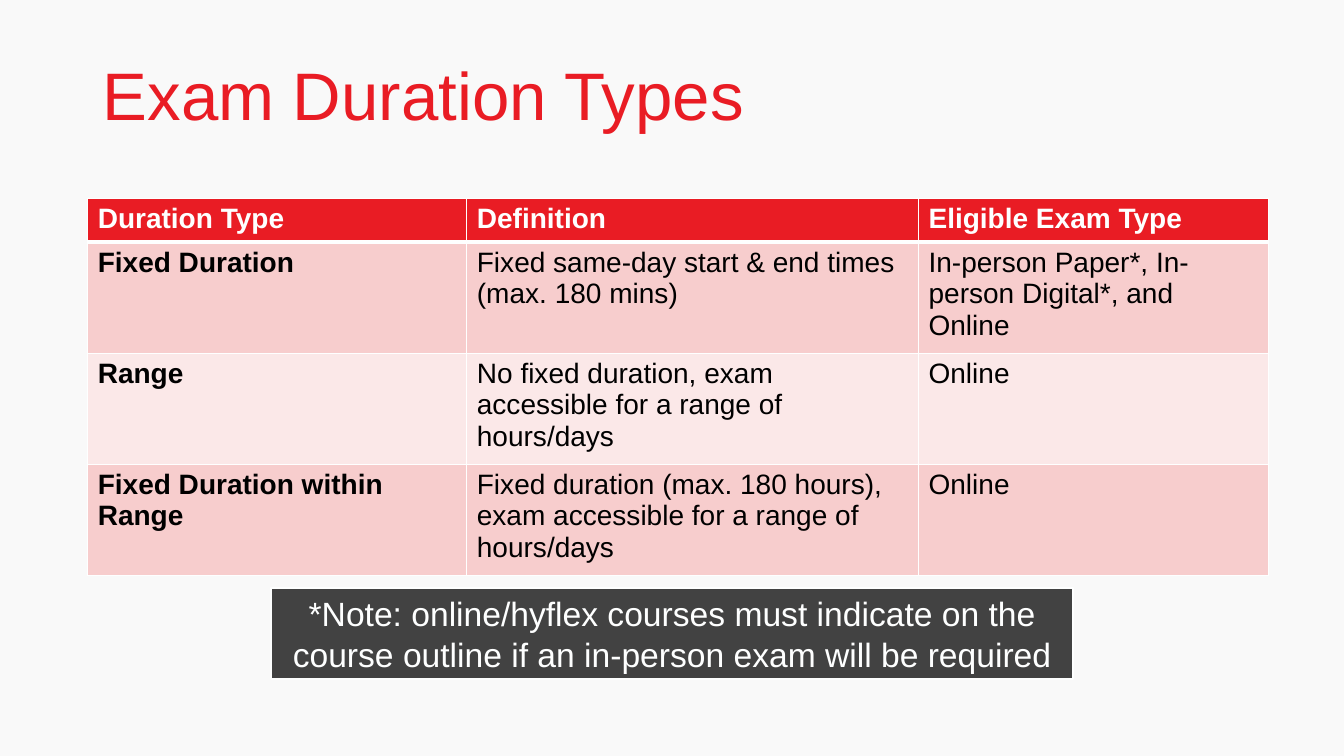
from dataclasses import dataclass

from lxml import etree
from pptx import Presentation
from pptx.dml.color import RGBColor
from pptx.enum.shapes import MSO_SHAPE
from pptx.enum.text import MSO_ANCHOR, PP_ALIGN
from pptx.oxml.ns import qn
from pptx.util import Inches, Pt

RECTANGLE = MSO_SHAPE.RECTANGLE
MIDDLE, BOTTOM = MSO_ANCHOR.MIDDLE, MSO_ANCHOR.BOTTOM
LEFT, CENTER = PP_ALIGN.LEFT, PP_ALIGN.CENTER

TITLE = "Exam Duration Types"
DURATION_ROWS = [
    ("Duration Type", "Definition", "Eligible Exam Type"),
    ("Fixed Duration", "Fixed same-day start & end times (max. 180 mins)",
     "In-person Paper*, In-person Digital*, and Online"),
    ("Range", "No fixed duration, exam accessible for a range of hours/days", "Online"),
    ("Fixed Duration within Range",
     "Fixed duration (max. 180 hours), exam accessible for a range of hours/days", "Online"),
]
NOTE = ("*Note: online/hyflex courses must indicate on the course outline "
        "if an in-person exam will be required")

TITLE_BOX = (0.92, 0.24, 11.5, 1.15)
TABLE_ORIGIN = (0.87, 1.97)
COLUMN_WIDTHS = (3.76, 4.48, 3.47)
HEADER_HEIGHT, BODY_HEIGHT = 0.41, 1.03
NOTE_BOX = (2.69, 5.83, 7.95, 0.91)


@dataclass(frozen=True)
class Theme:
    font: str = "Arial"
    background: str = "F9F9F9"
    red: str = "E91C24"
    white: str = "FEFFFF"
    black: str = "000000"
    gray: str = "424242"
    bands: tuple = ("F7CDCD", "FBE8E8")
    title_size: int = 48
    table_size: int = 20
    note_size: int = 24
    thin_line: float = 1
    header_line: float = 3
    note_line: float = 1.5


THEME = Theme()


def paint(fill, color):
    fill.solid()
    fill.fore_color.rgb = RGBColor.from_string(color)


def write_text(frame, text, *, size, color, bold=False, align=LEFT, spacing=None):
    frame.word_wrap = True
    paragraph = frame.paragraphs[0]
    paragraph.alignment = align
    if spacing:
        paragraph.line_spacing = spacing
    run = paragraph.add_run()
    run.text = text
    run.font.name = THEME.font
    run.font.size = Pt(size)
    run.font.bold = bold
    run.font.color.rgb = RGBColor.from_string(color)


def set_borders(cell, widths):
    properties = cell._tc.get_or_add_tcPr()
    for index, (side, width) in enumerate(widths.items()):
        line = etree.Element(qn(f"a:{side}"), w=str(Pt(width)))
        fill = etree.SubElement(line, qn("a:solidFill"))
        etree.SubElement(fill, qn("a:srgbClr"), val=THEME.white)
        properties.insert(index, line)


def add_title(slide):
    box = slide.shapes.add_textbox(*map(Inches, TITLE_BOX))
    box.text_frame.vertical_anchor = BOTTOM
    write_text(box.text_frame, TITLE, size=THEME.title_size, color=THEME.red, spacing=0.9)


def add_duration_table(slide):
    heights = [HEADER_HEIGHT] + [BODY_HEIGHT] * (len(DURATION_ROWS) - 1)
    frame = slide.shapes.add_table(
        len(heights), len(COLUMN_WIDTHS), *map(Inches, TABLE_ORIGIN),
        Inches(sum(COLUMN_WIDTHS)), Inches(sum(heights)))
    table = frame.table
    for column, width in zip(table.columns, COLUMN_WIDTHS):
        column.width = Inches(width)
    for row_index, (height, texts) in enumerate(zip(heights, DURATION_ROWS)):
        table.rows[row_index].height = Inches(height)
        header = row_index == 0
        band = THEME.red if header else THEME.bands[(row_index - 1) % 2]
        borders = dict.fromkeys(("lnL", "lnR", "lnT", "lnB"), THEME.thin_line)
        if header:
            borders["lnB"] = THEME.header_line
        elif row_index == 1:
            borders["lnT"] = THEME.header_line
        for column_index, text in enumerate(texts):
            cell = table.cell(row_index, column_index)
            paint(cell.fill, band)
            set_borders(cell, borders)
            write_text(cell.text_frame, text, size=THEME.table_size,
                       color=THEME.white if header else THEME.black,
                       bold=header or column_index == 0)


def add_note(slide):
    shape = slide.shapes.add_shape(RECTANGLE, *map(Inches, NOTE_BOX))
    shape.shadow.inherit = False
    paint(shape.fill, THEME.gray)
    paint(shape.line.fill, THEME.white)
    shape.line.width = Pt(THEME.note_line)
    shape.text_frame.vertical_anchor = MIDDLE
    write_text(shape.text_frame, NOTE, size=THEME.note_size, color=THEME.white, align=CENTER)


def main():
    presentation = Presentation()
    presentation.slide_width = Inches(13.33)
    presentation.slide_height = Inches(7.5)
    slide = presentation.slides.add_slide(presentation.slide_layouts[6])
    paint(slide.background.fill, THEME.background)
    add_title(slide)
    add_duration_table(slide)
    add_note(slide)
    presentation.save("out.pptx")


if __name__ == "__main__":
    main()
